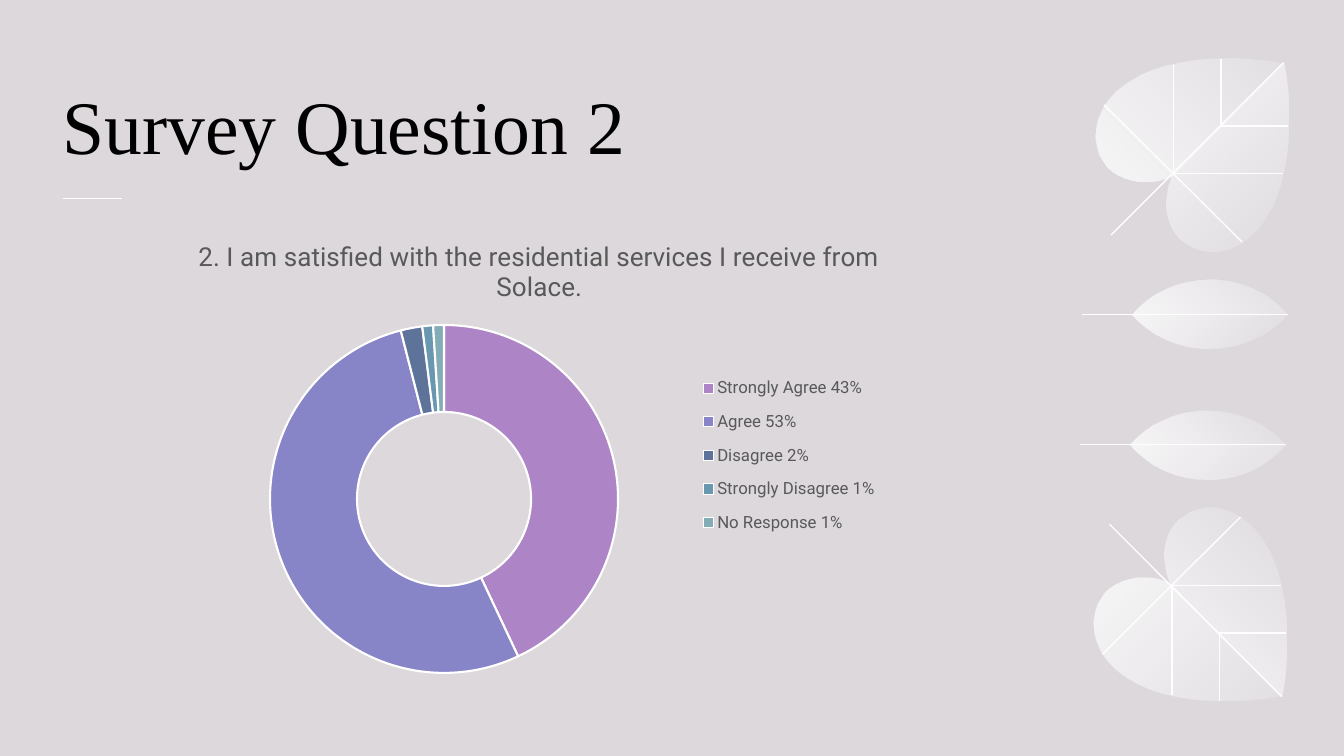
from dataclasses import dataclass

from lxml import etree
from pptx import Presentation
from pptx import util as u
from pptx.chart.data import CategoryChartData
from pptx.dml.color import RGBColor
from pptx.enum import chart as charts, shapes, text
from pptx.oxml import parse_xml
from pptx.oxml.ns import nsdecls, qn

WIDTH, HEIGHT = u.Inches(13.33), u.Inches(7.5)


@dataclass(frozen=True)
class Theme:
    """Colours, fonts and type sizes of the slide."""
    background: str = "DCD8DC"
    white: str = "FFFFFF"
    title: str = "000000"
    label: str = "595959"
    answers: tuple = ("AD84C6", "8784C7", "5D739A", "6997AF", "84ACB6")
    title_font: str = "Times New Roman"
    chart_font: str = "Roboto"
    title_size: float = 54
    question_size: float = 18.6
    legend_size: float = 12


THEME = Theme()


@dataclass(frozen=True)
class Box:
    """A region in percent of the slide's width and height."""
    left: float
    top: float
    width: float
    height: float

    def at(self, x, y):
        """Return the slide point at the shares x and y of the box."""
        return (round((self.left + x * self.width) * WIDTH / 100),
                round((self.top + y * self.height) * HEIGHT / 100))

    def frame(self):
        """Return left, top, width and height as lengths."""
        left, top = self.at(0, 0)
        right, bottom = self.at(1, 1)
        return left, top, right - left, bottom - top

    def shares_of(self, outer):
        """Return x, y, w and h as shares of an outer box."""
        return {"x": (self.left - outer.left) / outer.width,
                "y": (self.top - outer.top) / outer.height,
                "w": self.width / outer.width, "h": self.height / outer.height}


TITLE_BOX = Box(4.65, 5.77, 70.97, 17.33)
RULE_BOX = Box(4.68, 26.27, 4.4, 0)
CHART_BOX = Box(4.65, 29.07, 70.97, 61.73)
RING_BOX = Box(20.09, 42.99, 25.9, 46.03)
LEGEND_BOX = Box(51.26, 48.21, 14.9, 24.08)
TOP_LEAVES = Box(80.5, 7.75, 15.45, 38.67)
BOTTOM_LEAVES = Box(80.37, 54, 15.45, 38.67)

LEAF_COLUMNS, LEAF_ROWS = 206, 290
STRAIGHT_VEINS = [((200, 4), (29, 175)), ((22, 46), (159, 182))]
BENT_VEINS = [((199, 114), (91, 114), (91, 6)), ((204, 67), (138, 67), (138, 0))]
MIDRIB = ((0, 254), (204, 254))
BLADES = [
    ([((200, 5),), ((89, 116),), ((78, 120),), ((56, 125), (38, 119), (26, 108)),
      ((25, 107), (23, 105), (22, 103)), ((-6, 66), (28, -14), (182, 2))], 45, 20),
    ([((200, 4),), ((203, 22),), ((219, 176), (139, 211), (102, 182)),
      ((87, 172), (80, 152), (86, 126)), ((90, 115),), ((89, 116),)], 315, 10),
    ([((126, 219),), ((96, 219), (68, 232), (49, 254)), ((204, 254),),
      ((185, 232), (158, 219), (126, 219))], 45, 20),
    ([((204, 254),), ((49, 254),), ((68, 275), (96, 288), (126, 288)),
      ((158, 288), (185, 275), (204, 254))], 315, 10),
]

QUESTION = "2. I am satisfied with the residential services I receive from Solace."
ANSWERS = {"Strongly Agree": 43, "Agree": 53, "Disagree": 2,
           "Strongly Disagree": 1, "No Response": 1}


def rgb(colour):
    """Turn a hex string into a colour."""
    return RGBColor.from_string(colour)


def style_font(font, *, size, colour, name):
    """Format a font."""
    font.size, font.name, font.bold = u.Pt(size), name, False
    font.color.rgb = rgb(colour)


def write(frame, content, **style):
    """Put one formatted paragraph in a text frame."""
    frame.text = content
    style_font(frame.paragraphs[0].runs[0].font, **style)


def style_line(line, width=1):
    """Make a line white."""
    line.color.rgb, line.width = rgb(THEME.white), u.Pt(width)


def add_line(slide, start, end):
    """Draw a thin white line without a shadow."""
    line = slide.shapes.add_connector(shapes.MSO_CONNECTOR.STRAIGHT, *start, *end)
    style_line(line.line)
    etree.SubElement(line._element.spPr, qn("a:effectLst"))


def trace(segments, steps=16):
    """Return points along straight and cubic segments."""
    points = []
    for segment in segments:
        if len(segment) == 1:
            points.append(segment[0])
            continue
        corners = (points[-1], *segment)
        for t in (step / steps for step in range(1, steps + 1)):
            weights = ((1 - t) ** 3, 3 * t * (1 - t) ** 2, 3 * t * t * (1 - t), t ** 3)
            points.append(tuple(round(sum(w * c[axis] for w, c in zip(weights, corners)))
                                for axis in (0, 1)))
    return points


def add_outline(slide, points, close):
    """Draw a freeform through slide points."""
    builder = slide.shapes.build_freeform(*points[0])
    builder.add_line_segments(points[1:], close=close)
    shape = builder.convert_to_shape()
    shape.shadow.inherit = False
    return shape


def add_blade(slide, segments):
    """Draw a closed outline of true lines and curves, sized by its traced extent."""
    blade = add_outline(slide, trace(segments), close=True)
    outline = next(blade._element.iter(qn("a:path")))
    for child in list(outline):
        outline.remove(child)
    for index, segment in enumerate(segments):
        kind = "moveTo" if index == 0 else "lnTo" if len(segment) == 1 else "cubicBezTo"
        step = etree.SubElement(outline, qn(f"a:{kind}"))
        for x, y in segment:
            etree.SubElement(step, qn("a:pt"), x=str(x - blade.left), y=str(y - blade.top))
    etree.SubElement(outline, qn("a:close"))
    blade.line.fill.background()
    return blade


def fade(fill, angle, end_opacity):
    """Fill with white that grows more transparent along an angle."""
    fill.gradient()
    fill.gradient_angle = angle
    for stop in fill.gradient_stops:
        stop.color.rgb = rgb(THEME.white)
    for colour, opacity in zip(fill._xPr.iter(qn("a:srgbClr")), (80, end_opacity)):
        etree.SubElement(colour, qn("a:alpha"), val=str(opacity * 1000))


def add_leaves(slide, box, flipped=False):
    """Draw a heart-shaped leaf and a slender one, upside down if flipped."""
    def place(points):
        return [box.at(x / LEAF_COLUMNS,
                       1 - y / LEAF_ROWS if flipped else y / LEAF_ROWS)
                for x, y in points]

    for vein in STRAIGHT_VEINS:
        add_line(slide, *place(vein))
    for vein in BENT_VEINS:
        shape = add_outline(slide, place(vein), close=False)
        shape.fill.background()
        style_line(shape.line)
    for segments, angle, opacity in BLADES:
        blade = add_blade(slide, [place(segment) for segment in segments])
        fade(blade.fill, 360 - angle if flipped else angle, opacity)
    add_line(slide, *place(MIDRIB))


def add_title(slide, box):
    """Place the slide title."""
    title = slide.shapes.title
    title.left, title.top, title.width, title.height = box.frame()
    frame = title.text_frame
    write(frame, "Survey Question 2", size=THEME.title_size,
          colour=THEME.title, name=THEME.title_font)
    frame.auto_size = text.MSO_AUTO_SIZE.NONE
    frame.vertical_anchor = text.MSO_ANCHOR.BOTTOM
    frame.margin_left = 0
    frame.paragraphs[0].alignment = text.PP_ALIGN.LEFT


def set_layout(element, before, target, shares):
    """Fix the place of a chart part as shares of the chart."""
    for old in element.findall(qn("c:layout")):
        element.remove(old)
    inner = '<c:layoutTarget val="inner"/>' if target else ""
    modes = '<c:xMode val="edge"/><c:yMode val="edge"/>'
    sizes = "".join(f'<c:{key} val="{value:.4f}"/>' for key, value in shares.items())
    element.find(qn(before)).addprevious(parse_xml(
        f'<c:layout {nsdecls("c")}><c:manualLayout>{inner}{modes}{sizes}'
        '</c:manualLayout></c:layout>'))


def add_answers(slide, box):
    """Draw the ring of answers with its question and legend."""
    data = CategoryChartData()
    data.categories = [f"{answer} {share}%" for answer, share in ANSWERS.items()]
    data.add_series(QUESTION, list(ANSWERS.values()))
    chart = slide.shapes.add_chart(charts.XL_CHART_TYPE.DOUGHNUT, *box.frame(), data).chart
    style_font(chart.font, size=10, colour=THEME.title, name=THEME.chart_font)
    write(chart.chart_title.text_frame, QUESTION, size=THEME.question_size,
          colour=THEME.label, name=THEME.chart_font)
    chart.has_legend = True
    legend = chart.legend
    legend.position, legend.include_in_layout = charts.XL_LEGEND_POSITION.RIGHT, False
    style_font(legend.font, size=THEME.legend_size, colour=THEME.label, name=THEME.chart_font)
    plot = chart.plots[0]
    for index, colour in enumerate(THEME.answers):
        point = plot.series[0].points[index].format
        point.fill.solid()
        point.fill.fore_color.rgb = rgb(colour)
        style_line(point.line, 1.5)
    ring = plot._element
    ring.find(qn("c:holeSize")).set("val", "75")
    set_layout(ring.getparent(), "c:doughnutChart", True, RING_BOX.shares_of(box))
    set_layout(legend._element, "c:overlay", False, LEGEND_BOX.shares_of(box))


def main():
    """Build the survey slide."""
    presentation = Presentation()
    presentation.slide_width, presentation.slide_height = WIDTH, HEIGHT
    slide = presentation.slides.add_slide(presentation.slide_layouts[5])
    slide.background.fill.solid()
    slide.background.fill.fore_color.rgb = rgb(THEME.background)
    add_leaves(slide, TOP_LEAVES)
    add_line(slide, RULE_BOX.at(0, 0), RULE_BOX.at(1, 0))
    add_leaves(slide, BOTTOM_LEAVES, flipped=True)
    add_title(slide, TITLE_BOX)
    add_answers(slide, CHART_BOX)
    presentation.save("out.pptx")


if __name__ == "__main__":
    main()
